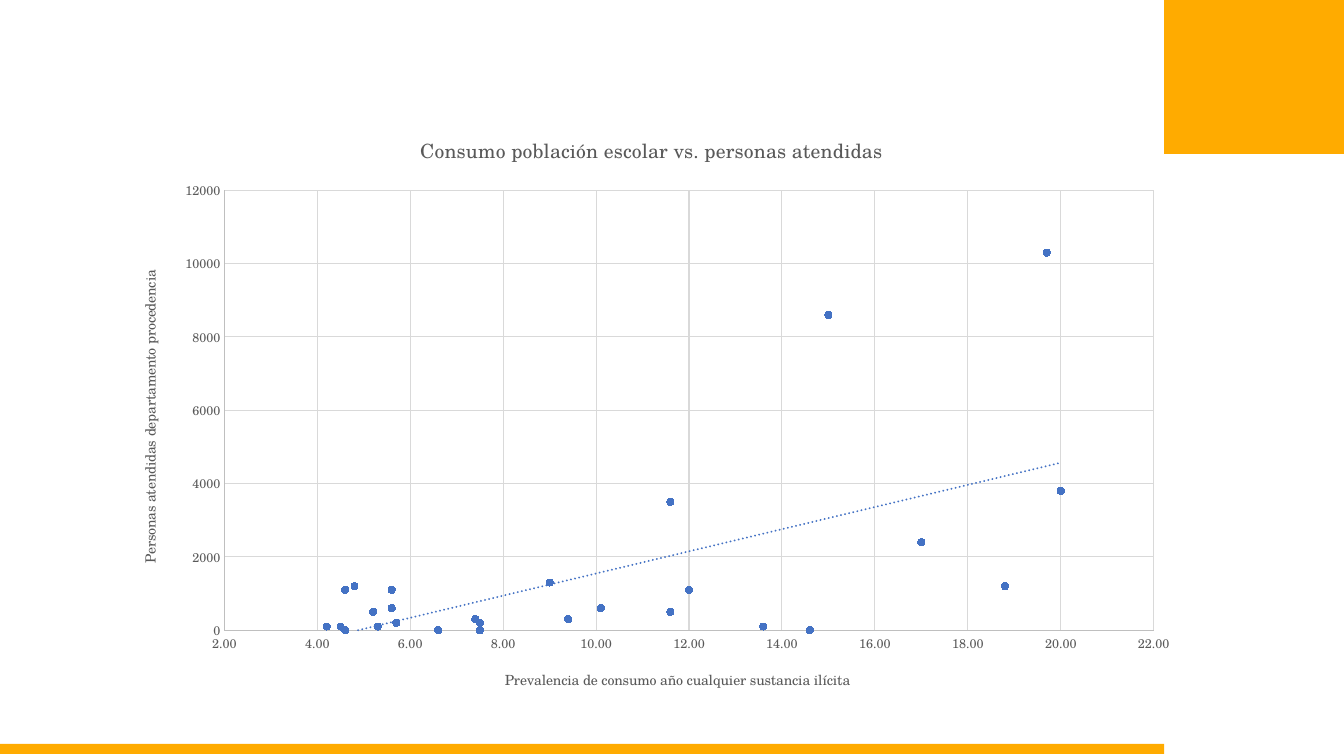
import dataclasses

import pptx
import pptx.chart.data
import pptx.dml.color
import pptx.enum.chart
import pptx.enum.shapes
import pptx.oxml
import pptx.oxml.ns
import pptx.util

Pt = pptx.util.Pt
NS = pptx.oxml.ns.nsdecls("c", "a")


@dataclasses.dataclass(frozen=True)
class Theme:
    font: str = "TeX Gyre Schola"
    accent: str = "FFAB00"
    dots: str = "4472C4"
    text: str = "595959"
    axis: str = "BFBFBF"
    grid: str = "D9D9D9"
    title: float = 14
    label: float = 10
    tick: float = 9


THEME = Theme()

# Prevalence of use, people attended
POINTS = [
    (19.7, 10300), (5.3, 100), (15, 8600), (4.8, 1200), (7.5, 200),
    (20, 3800), (7.5, 0), (10.1, 600), (5.2, 500), (4.5, 100),
    (11.6, 500), (4.2, 100), (7.4, 300), (4.6, 0), (5.7, 200),
    (5.6, 600), (12, 1100), (5.6, 1100), (17, 2400), (18.8, 1200),
    (9, 1300), (4.6, 1100), (9.4, 300), (11.6, 3500), (6.6, 0),
    (13.6, 100), (14.6, 0),
]


def color(code):
    return pptx.dml.color.RGBColor.from_string(code)


def add_block(slide, left, top, width, height):
    block = slide.shapes.add_shape(
        pptx.enum.shapes.MSO_SHAPE.RECTANGLE,
        Pt(left), Pt(top), Pt(width), Pt(height))
    block.shadow.inherit = False
    block.fill.solid()
    block.fill.fore_color.rgb = color(THEME.accent)
    block.line.fill.background()


def style_font(font, size):
    font.name = THEME.font
    font.size = Pt(size)
    font.bold = False
    font.color.rgb = color(THEME.text)


def set_title(title, text, size):
    run = title.text_frame.paragraphs[0].add_run()
    run.text = text
    style_font(run.font, size)


def style_line(line, code):
    line.color.rgb = color(code)
    line.width = Pt(0.75)


def set_axis(axis, text, low, high, step, form):
    axis.minimum_scale, axis.maximum_scale = low, high
    axis.major_unit = step
    axis.major_tick_mark = pptx.enum.chart.XL_TICK_MARK.NONE
    axis.minor_tick_mark = pptx.enum.chart.XL_TICK_MARK.NONE
    axis.has_major_gridlines = True
    style_line(axis.major_gridlines.format.line, THEME.grid)
    style_line(axis.format.line, THEME.axis)
    axis.tick_labels.number_format = form
    axis.tick_labels.number_format_is_linked = False
    style_font(axis.tick_labels.font, THEME.tick)
    set_title(axis.axis_title, text, THEME.label)


def set_dots(series):
    series.format.line.fill.background()
    mark = series.marker
    mark.style = pptx.enum.chart.XL_MARKER_STYLE.CIRCLE
    mark.size = 5
    mark.format.fill.solid()
    mark.format.fill.fore_color.rgb = color(THEME.dots)
    mark.format.line.color.rgb = color(THEME.dots)


def add_trend(chart):
    trend = pptx.oxml.parse_xml(
        f'<c:trendline {NS}><c:spPr><a:ln w="{Pt(1.5)}" cap="rnd">'
        f'<a:solidFill><a:srgbClr val="{THEME.dots}"/></a:solidFill>'
        '<a:prstDash val="sysDot"/></a:ln></c:spPr>'
        '<c:trendlineType val="linear"/><c:dispRSqr val="0"/>'
        '<c:dispEq val="0"/></c:trendline>')
    chart.element.xpath(".//c:ser/c:xVal")[0].addprevious(trend)


def place_plot(chart, **box):
    """Fix the inner plot area, in fractions of the chart."""
    sizes = "".join(f'<c:{key} val="{val}"/>' for key, val in box.items())
    layout = pptx.oxml.parse_xml(
        f'<c:layout {NS}><c:manualLayout><c:layoutTarget val="inner"/>'
        '<c:xMode val="edge"/><c:yMode val="edge"/>'
        f'{sizes}</c:manualLayout></c:layout>')
    area = chart.element.xpath(".//c:plotArea")[0]
    for old in area.xpath("./c:layout"):
        area.remove(old)
    area.insert(0, layout)


def add_scatter(slide):
    data = pptx.chart.data.XyChartData()
    series = data.add_series("Series 1")
    for x, y in POINTS:
        series.add_data_point(x, y)
    chart = slide.shapes.add_chart(
        pptx.enum.chart.XL_CHART_TYPE.XY_SCATTER,
        Pt(84), Pt(80), Pt(763), Pt(430.5), data).chart
    style_font(chart.font, THEME.label)
    chart.has_legend = False
    chart.has_title = True
    set_title(chart.chart_title,
              "Consumo población escolar vs. personas atendidas", THEME.title)
    set_axis(chart.category_axis,
             "Prevalencia de consumo año cualquier sustancia ilícita",
             2, 22, 2, "0.00")
    set_axis(chart.value_axis, "Personas atendidas departamento procedencia",
             0, 12000, 2000, "0")
    turn = chart.value_axis.axis_title.element.xpath(".//a:bodyPr")[0]
    turn.set("rot", "-5400000")
    turn.set("vert", "horz")
    plot = chart.plots[0]
    plot.vary_by_categories = False
    set_dots(plot.series[0])
    plot.series[0].smooth = False
    add_trend(chart)
    place_plot(chart, x=0.1, y=0.13, w=0.87, h=0.73)


def main():
    deck = pptx.Presentation()
    deck.slide_width, deck.slide_height = Pt(960), Pt(540)
    slide = deck.slides.add_slide(deck.slide_layouts[6])
    add_block(slide, 0, 531.4, 831.6, 7.2)
    add_block(slide, 831.6, 0, 128.4, 110)
    add_scatter(slide)
    deck.save("out.pptx")


if __name__ == "__main__":
    main()
